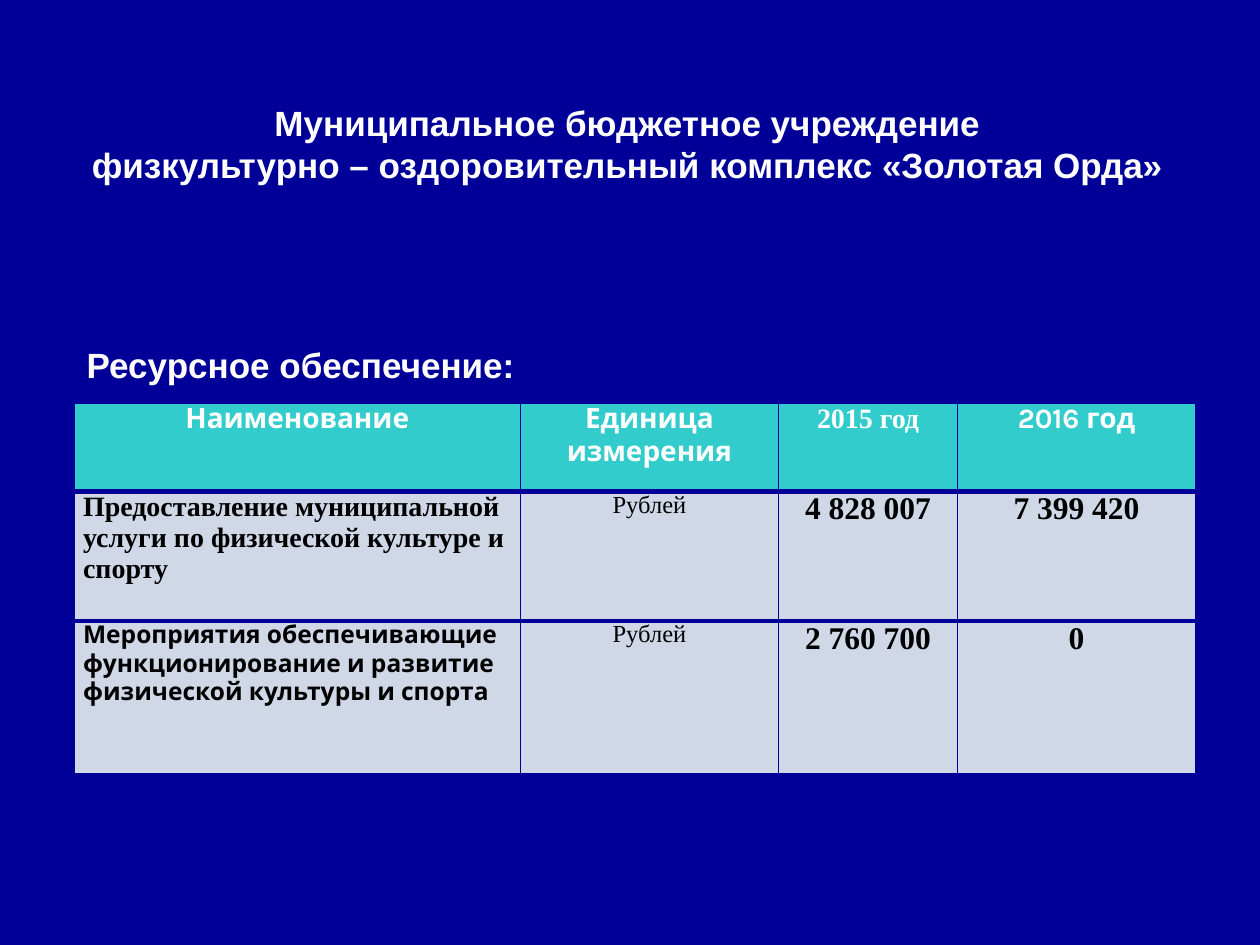
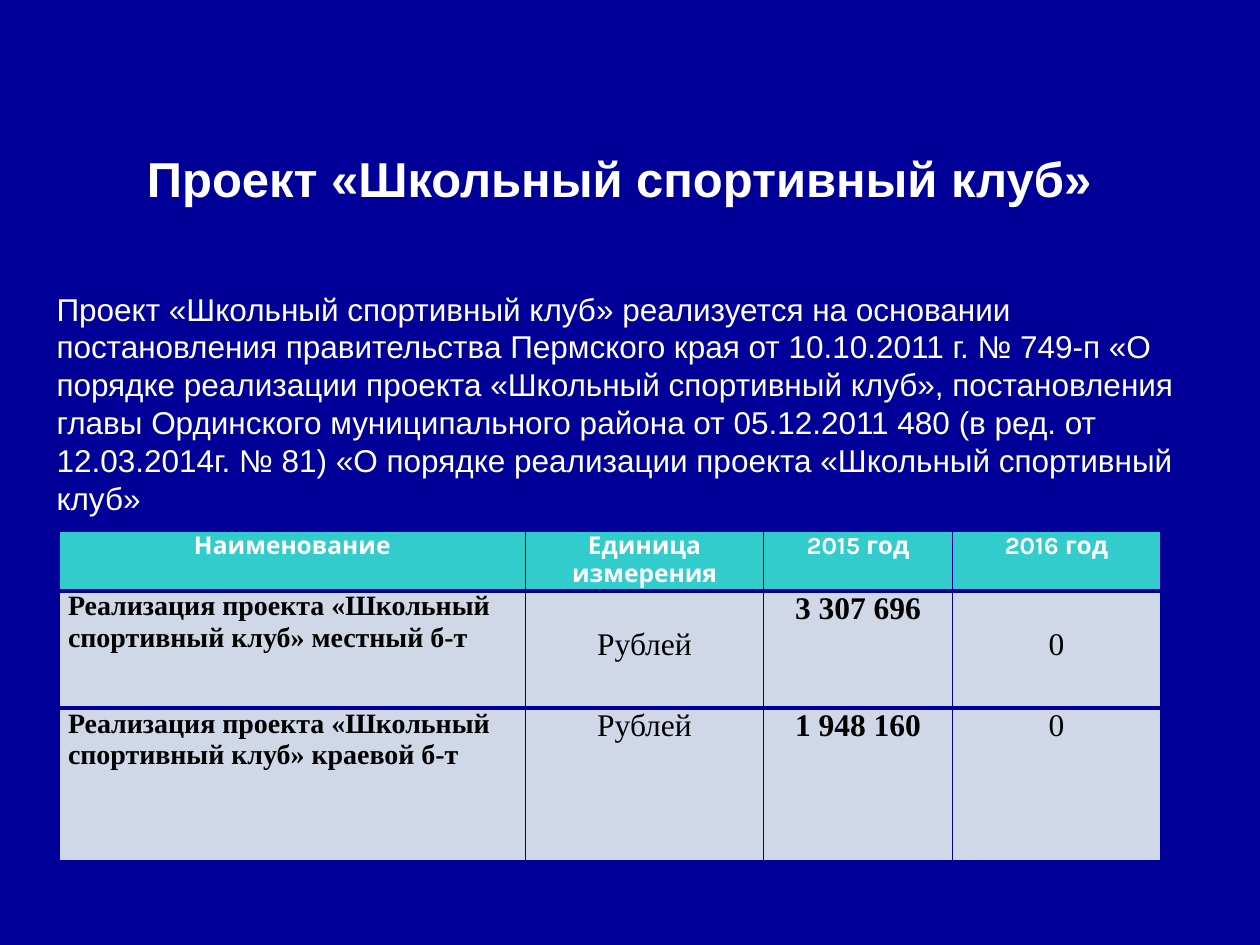
from lxml import etree
from pptx import Presentation
from pptx.dml.color import RGBColor
from pptx.enum.text import MSO_ANCHOR, PP_ALIGN
from pptx.oxml.ns import qn
from pptx.util import Inches, Pt

NAVY, TEAL, PALE, WHITE, BLACK = "000099", "33CCCC", "D0D8E8", "FFFFFF", "000000"
ARIAL, KARLA, TIMES = "Arial", "Karla", "Times New Roman"
THIN, THICK = 1, 3
SIDE_MARGIN = 0.07
LOWERED = 0.29  # top margin of a cell whose text starts one line lower

# Text: (place, lines, size, bold, centred, wrapped)
# Cell: (text, font, size, bold[, top margin])
SLIDES = [
    {
        "texts": [
            ((0.6, 0.76, 8.76, 0.77),
             ["Муниципальное бюджетное учреждение",
              "физкультурно – оздоровительный комплекс «Золотая Орда»"],
             20, True, True, False),
            ((0.59, 2.68, 6.3, 0.43), ["Ресурсное обеспечение:"],
             20, True, False, True),
        ],
        "corner": (0.59, 3.2),
        "columns": (3.54, 2.05, 1.42, 1.89),
        "rows": (0.7, 1.03, 1.21),
        "cells": [
            [("Наименование", KARLA, 16, True),
             ("Единица измерения", KARLA, 16, True),
             ("2015 год", TIMES, 16, True),
             ("2016 год", KARLA, 16, True)],
            [("Предоставление муниципальной услуги по физической культуре и спорту",
              TIMES, 16, True),
             ("Рублей", TIMES, 14, False),
             ("4 828 007", TIMES, 18, True),
             ("7 399 420", TIMES, 18, True)],
            [("Мероприятия обеспечивающие функционирование и развитие "
              "физической культуры и спорта", KARLA, 14, True),
             ("Рублей", TIMES, 14, False),
             ("2 760 700", TIMES, 18, True),
             ("0", TIMES, 18, True)],
        ],
    },
    {
        "texts": [
            ((1.05, 1.13, 7.73, 0.57), ["Проект «Школьный спортивный клуб»"],
             28, True, True, False),
            ((0.35, 2.25, 9.29, 2.8),
             ["Проект «Школьный спортивный клуб» реализуется на основании "
              "постановления правительства Пермского края от 10.10.2011 г. № 749-п "
              "«О порядке реализации проекта «Школьный спортивный клуб», "
              "постановления главы Ординского муниципального района от 05.12.2011 "
              "480 (в ред. от 12.03.2014г. № 81) «О порядке реализации проекта "
              "«Школьный спортивный клуб»"],
             18, False, False, True),
        ],
        "corner": (0.47, 4.22),
        "columns": (3.7, 1.89, 1.5, 1.65),
        "rows": (0.47, 0.93, 1.21),
        "cells": [
            [("Наименование", KARLA, 14, True),
             ("Единица измерения", KARLA, 14, True),
             ("2015 год", KARLA, 14, True),
             ("2016 год", KARLA, 14, True)],
            [("Реализация проекта «Школьный спортивный клуб» местный б-т",
              TIMES, 16, True),
             ("Рублей", TIMES, 18, False, LOWERED),
             ("3 307 696", TIMES, 18, True),
             ("0", TIMES, 18, False, LOWERED)],
            [("Реализация проекта «Школьный спортивный клуб» краевой б-т",
              TIMES, 16, True),
             ("Рублей", TIMES, 18, False),
             ("1 948 160", TIMES, 18, True),
             ("0", TIMES, 18, False)],
        ],
    },
]


def paint(fill, color):
    fill.solid()
    fill.fore_color.rgb = RGBColor.from_string(color)


def write(paragraph, text, font_name, size, bold, color, centred):
    paragraph.alignment = PP_ALIGN.CENTER if centred else PP_ALIGN.LEFT
    run = paragraph.add_run()
    run.text = text
    run.font.name = font_name
    run.font.size = Pt(size)
    run.font.bold = bold
    run.font.color.rgb = RGBColor.from_string(color)


def add_text(slide, place, lines, size, bold, centred, wrapped):
    frame = slide.shapes.add_textbox(*map(Inches, place)).text_frame
    frame.word_wrap = wrapped
    for index, line in enumerate(lines):
        paragraph = frame.add_paragraph() if index else frame.paragraphs[0]
        write(paragraph, line, ARIAL, size, bold, WHITE, centred)


def set_borders(cell, top, bottom):
    """Navy rules: thin at the sides, given widths above and below."""
    properties = cell._tc.get_or_add_tcPr()
    widths = {"a:lnL": THIN, "a:lnR": THIN, "a:lnT": top, "a:lnB": bottom}
    for position, (tag, width) in enumerate(widths.items()):
        line = etree.Element(qn(tag), w=str(Pt(width)))
        solid = etree.SubElement(line, qn("a:solidFill"))
        etree.SubElement(solid, qn("a:srgbClr"), val=NAVY)
        properties.insert(position, line)


def fill_cell(cell, content, is_header, is_name, is_last):
    text, font_name, size, bold, *top_margin = content
    cell.margin_left = cell.margin_right = Inches(SIDE_MARGIN)
    cell.margin_top = Inches(top_margin[0] if top_margin else 0)
    cell.margin_bottom = 0
    cell.vertical_anchor = MSO_ANCHOR.TOP
    paint(cell.fill, TEAL if is_header else PALE)
    set_borders(cell, THIN if is_header else THICK, THIN if is_last else THICK)
    write(cell.text_frame.paragraphs[0], text, font_name, size, bold,
          WHITE if is_header else BLACK, is_header or not is_name)


def add_budget_table(slide, corner, columns, rows, cells):
    size = sum(columns), sum(rows)
    table = slide.shapes.add_table(
        len(rows), len(columns), *map(Inches, corner + size)).table
    table.horz_banding = False
    for column, width in zip(table.columns, columns):
        column.width = Inches(width)
    for row, height in zip(table.rows, rows):
        row.height = Inches(height)
    for r, contents in enumerate(cells):
        for c, content in enumerate(contents):
            fill_cell(table.cell(r, c), content, r == 0, c == 0, r == len(rows) - 1)


def main():
    deck = Presentation()
    deck.slide_width, deck.slide_height = Inches(10), Inches(7.5)
    for page in SLIDES:
        slide = deck.slides.add_slide(deck.slide_layouts[6])
        paint(slide.background.fill, NAVY)
        for text in page["texts"]:
            add_text(slide, *text)
        add_budget_table(slide, page["corner"], page["columns"],
                         page["rows"], page["cells"])
    deck.save("out.pptx")


if __name__ == "__main__":
    main()
